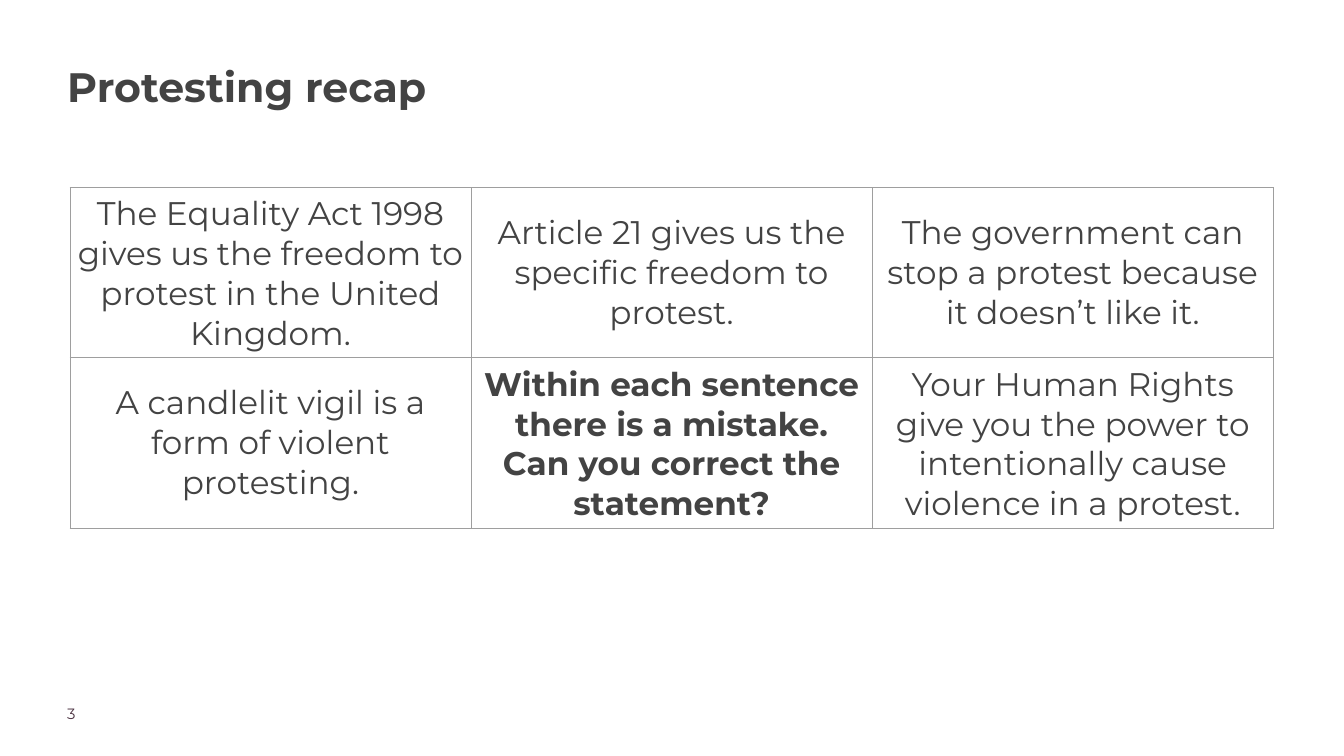
from dataclasses import dataclass

from lxml.etree import SubElement
from pptx import Presentation
from pptx.dml.color import RGBColor
from pptx.enum.text import MSO_ANCHOR as Anchor, PP_ALIGN as Align
from pptx.oxml.ns import qn
from pptx.util import Emu, Pt

EMU_PER_PX = 9144  # 100 px to the inch


@dataclass(frozen=True)
class Theme:
    font: str = "Montserrat"
    text: str = "434343"
    page_number: str = "4B3241"
    border: str = "9E9E9E"
    background: str = "FFFFFF"
    title_size: int = 44
    cell_size: int = 35
    number_size: int = 16
    border_width: float = 0.75


THEME = Theme()

PROMPT = "Within each sentence there is a mistake. Can you correct the statement?"
STATEMENTS = [
    ["The Equality Act 1998 gives us the freedom to protest in the United Kingdom.",
     "Article 21 gives us the specific freedom to protest.",
     "The government can stop a protest because it doesn’t like it."],
    ["A candlelit vigil is a form of violent protesting.",
     PROMPT,
     "Your Human Rights give you the power to intentionally cause violence in a protest."],
]


def px(n):
    return Emu(n * EMU_PER_PX)


def write(tf, text, *, size, color=THEME.text, bold=False, align=Align.LEFT,
          anchor=Anchor.TOP, line_spacing=None):
    tf.word_wrap = True
    tf.vertical_anchor = anchor
    p = tf.paragraphs[0]
    p.alignment = align
    p.line_spacing = line_spacing
    r = p.add_run()
    r.text = text
    r.font.name = THEME.font
    r.font.size = Pt(size)
    r.font.bold = bold
    r.font.color.rgb = RGBColor.from_string(color)


def clear_insets(tf):
    tf.margin_left = tf.margin_top = tf.margin_right = tf.margin_bottom = 0


def add_title(s, text):
    sp = s.shapes.title
    sp.left, sp.top, sp.width, sp.height = px(100), px(80), px(1444), px(178)
    clear_insets(sp.text_frame)
    write(sp.text_frame, text, size=THEME.title_size, bold=True, line_spacing=1.15)


def add_page_number(s, number):
    sp = s.shapes.add_textbox(px(100), px(1048), px(157), px(39))
    clear_insets(sp.text_frame)
    write(sp.text_frame, number, size=THEME.number_size, color=THEME.page_number)


def add_borders(cell):
    """Draw all four sides; called before the fill, which must follow them in the XML."""
    tc_pr = cell._tc.get_or_add_tcPr()
    for side in ("lnL", "lnR", "lnT", "lnB"):
        ln = SubElement(tc_pr, qn(f"a:{side}"), w=str(Pt(THEME.border_width)))
        fill = SubElement(ln, qn("a:solidFill"))
        SubElement(fill, qn("a:srgbClr"), val=THEME.border)


def add_statement_table(s, rows, left, top, col_width, row_height):
    n_rows, n_cols = len(rows), len(rows[0])
    table = s.shapes.add_table(n_rows, n_cols, px(left), px(top),
                               px(col_width * n_cols), px(row_height * n_rows)).table
    table.first_row = table.horz_banding = False
    for col in table.columns:
        col.width = px(col_width)
    for row, texts in zip(table.rows, rows):
        row.height = px(row_height)
        for cell, text in zip(row.cells, texts):
            add_borders(cell)
            cell.fill.background()
            cell.margin_left = cell.margin_right = px(10)
            cell.margin_top = cell.margin_bottom = px(10)
            cell.vertical_anchor = Anchor.MIDDLE
            write(cell.text_frame, text, size=THEME.cell_size, bold=text == PROMPT,
                  align=Align.CENTER, anchor=None)


def main():
    prs = Presentation()
    prs.slide_width, prs.slide_height = px(2000), px(1125)
    s = prs.slides.add_slide(prs.slide_layouts[5])
    s.background.fill.solid()
    s.background.fill.fore_color.rgb = RGBColor.from_string(THEME.background)
    add_title(s, "Protesting recap")
    add_page_number(s, "3")
    add_statement_table(s, STATEMENTS, left=104, top=279, col_width=597, row_height=248)
    prs.save("out.pptx")


if __name__ == "__main__":
    main()
